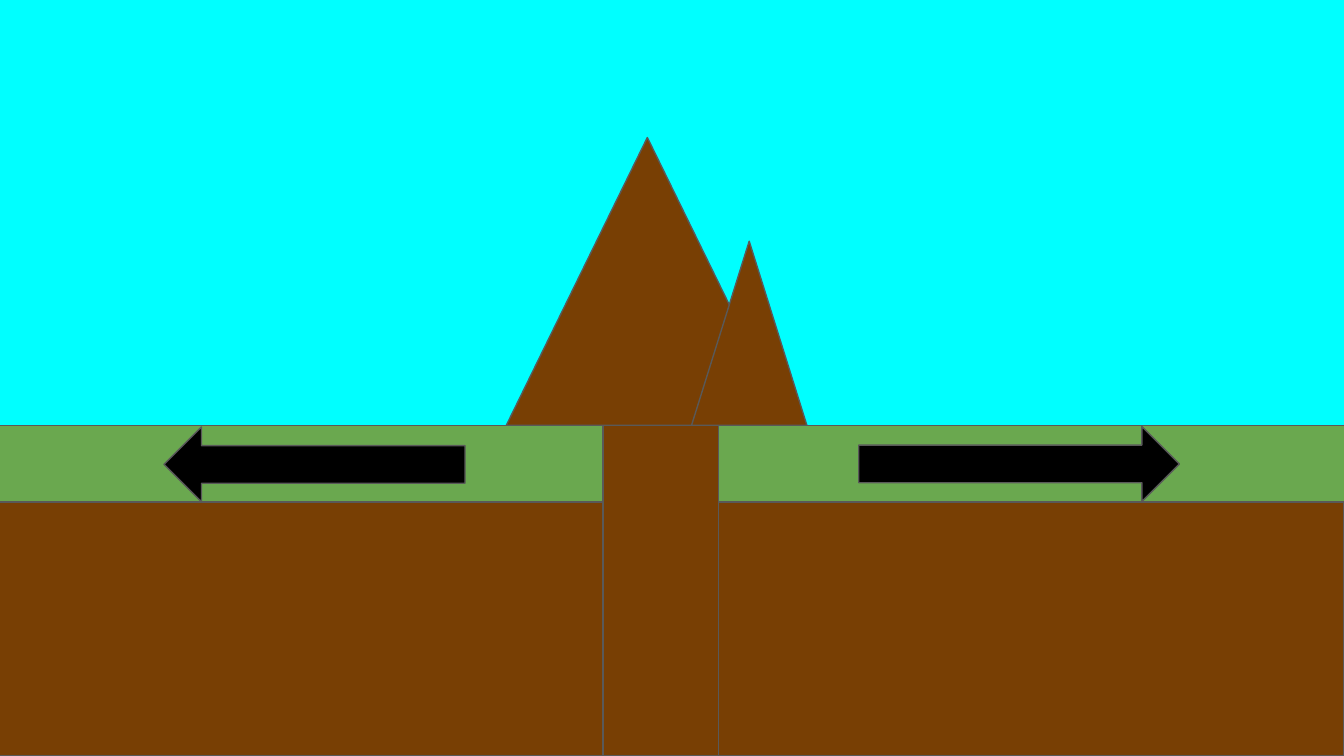
"""Build a slide of a volcano vent with two arrows moving apart."""
from pptx import Presentation
from pptx.dml.color import RGBColor
from pptx.enum.shapes import MSO_SHAPE
from pptx.util import Cm, Pt

RECTANGLE = MSO_SHAPE.RECTANGLE
PROCESS = MSO_SHAPE.FLOWCHART_PROCESS
TRIANGLE = MSO_SHAPE.ISOSCELES_TRIANGLE
LEFT_ARROW = MSO_SHAPE.LEFT_ARROW
RIGHT_ARROW = MSO_SHAPE.RIGHT_ARROW

SKY = RGBColor(0x00, 0xFF, 0xFF)
EARTH = RGBColor(0x78, 0x3F, 0x04)
GRASS = RGBColor(0x6A, 0xA8, 0x4F)
BLACK = RGBColor(0x00, 0x00, 0x00)
OUTLINE = RGBColor(0x59, 0x59, 0x59)

GROUND = 8.04
BOTTOM = 14.28

presentation = Presentation()
presentation.slide_width = Cm(25.4)
presentation.slide_height = Cm(14.29)
slide = presentation.slides.add_slide(presentation.slide_layouts[6])
slide.background.fill.solid()
slide.background.fill.fore_color.rgb = SKY

soil = (RECTANGLE, EARTH, -0.08, 8.38, 25.48, BOTTOM - 8.38)
grass = (RECTANGLE, GRASS, -0.05, GROUND, 25.48, 1.45)
right_arrow = (RIGHT_ARROW, BLACK, 16.23, 8.06, 6.06, 1.42)
left_arrow = (LEFT_ARROW, BLACK, 3.1, 8.07, 5.69, 1.42)
vent = (PROCESS, EARTH, 11.4, GROUND, 2.18, BOTTOM - GROUND)
large_peak = (TRIANGLE, EARTH, 9.57, 2.6, 5.33, GROUND - 2.6)
small_peak = (TRIANGLE, EARTH, 13.07, 4.56, 2.18, GROUND - 4.56)
scenery = [soil, grass, right_arrow, left_arrow, vent, large_peak, small_peak]

for kind, color, left, top, width, height in scenery:
    shape = slide.shapes.add_shape(kind, Cm(left), Cm(top), Cm(width), Cm(height))
    shape.shadow.inherit = False
    shape.fill.solid()
    shape.fill.fore_color.rgb = color
    shape.line.color.rgb = OUTLINE
    shape.line.width = Pt(0.75)

presentation.save("out.pptx")
